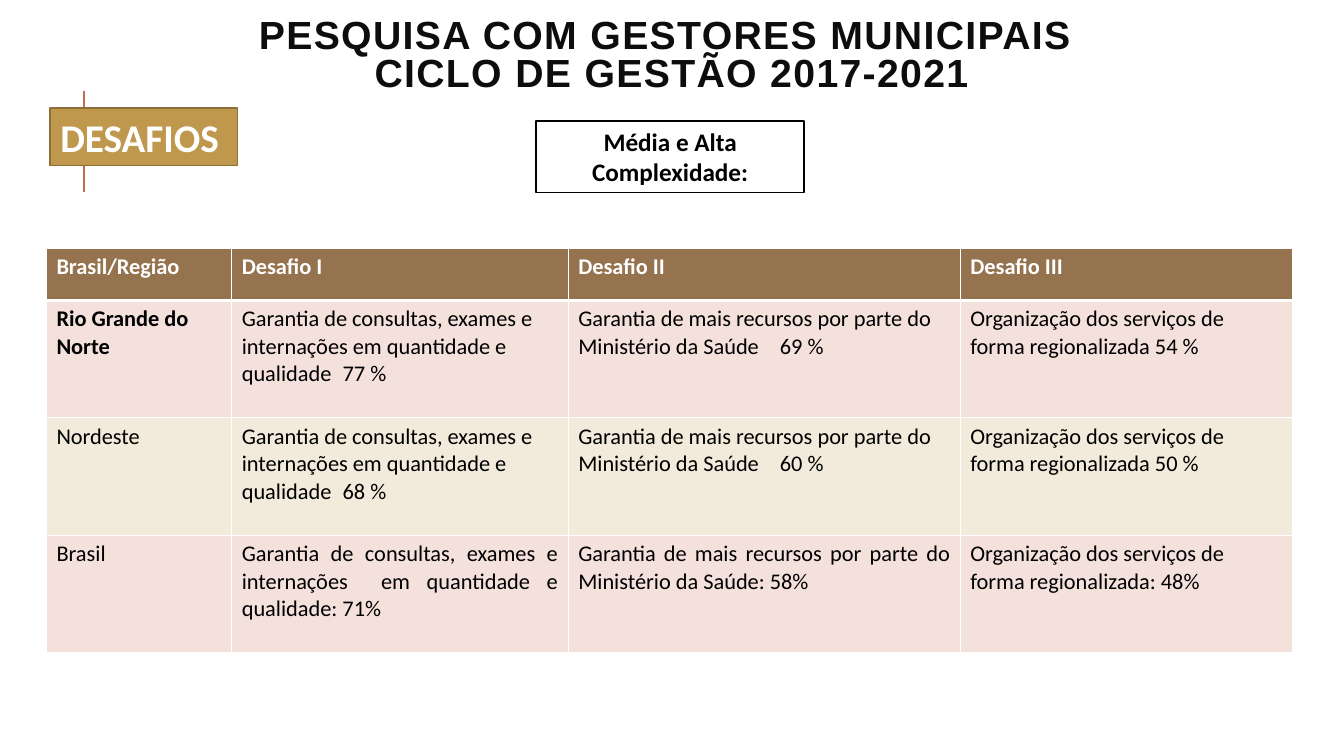
from lxml.etree import SubElement
from pptx import Presentation
from pptx.dml.color import RGBColor
from pptx.enum.shapes import MSO_CONNECTOR as CONN, MSO_SHAPE as SHAPE
from pptx.enum.text import MSO_ANCHOR as ANCHOR, PP_ALIGN as ALIGN
from pptx.oxml.ns import qn
from pptx.util import Cm, Pt

COLS = (4.67, 8.48, 9.88, 8.38)
HEADER_H, ROW_H = 1.32, 2.96
HEADER = ("Brasil/Região", "Desafio I", "Desafio II", "Desafio III")
CONSULTAS = "Garantia de consultas, exames e internações em quantidade e qualidade"
RECURSOS = "Garantia de mais recursos por parte do Ministério da Saúde"
SERVICOS = "Organização dos serviços de forma regionalizada"
ROWS = (
    HEADER,
    ("Rio Grande do Norte", f"{CONSULTAS}\t77 %", f"{RECURSOS}\t69 %", f"{SERVICOS} 54 %"),
    ("Nordeste", f"{CONSULTAS}\t68 %", f"{RECURSOS}\t60 %", f"{SERVICOS} 50 %"),
    ("Brasil", f"{CONSULTAS.replace(' em', '  em')}: 71%", f"{RECURSOS}: 58%", f"{SERVICOS}: 48%"),
)


def rgb(color):
    return RGBColor.from_string(color)


def write(tf, text, size=16, color="000000", bold=False, align=ALIGN.LEFT,
          font="Calibri", line_spacing=None, tracking=None):
    """Fill the first paragraph; a newline in the text becomes a line break."""
    tf.word_wrap = True
    p = tf.paragraphs[0]
    p.alignment = align
    if line_spacing:
        p.line_spacing = line_spacing
    for i, line in enumerate(text.split("\n")):
        if i:
            p.add_line_break()
        r = p.add_run()
        r.text = line
        r.font.name, r.font.size, r.font.bold = font, Pt(size), bold
        r.font.color.rgb = rgb(color)
        if tracking:
            r._r.get_or_add_rPr().set("spc", str(tracking * 100))


def add_title(s, x, y, w, h):
    tf = s.shapes.add_textbox(Cm(x), Cm(y), Cm(w), Cm(h)).text_frame
    tf.vertical_anchor = ANCHOR.MIDDLE
    write(tf, "PESQUISA COM GESTORES MUNICIPAIS \nCICLO DE GESTÃO 2017-2021", size=28,
          color="0D0D0D", bold=True, align=ALIGN.CENTER, font="Arial",
          line_spacing=0.8, tracking=1)


def add_accent_line(s, x, y, h):
    line = s.shapes.add_connector(CONN.STRAIGHT, Cm(x), Cm(y + h), Cm(x), Cm(y))
    line.line.color.rgb, line.line.width = rgb("C66951"), Pt(1.5)
    SubElement(line._element.spPr, qn("a:effectLst"))


def add_label(s, x, y, w, h, text, fill, outline, **fmt):
    sp = s.shapes.add_shape(SHAPE.RECTANGLE, Cm(x), Cm(y), Cm(w), Cm(h))
    sp.shadow.inherit = False
    sp.fill.solid()
    sp.fill.fore_color.rgb = rgb(fill)
    sp.line.color.rgb, sp.line.width = rgb(outline), Pt(1.25)
    sp.text_frame.vertical_anchor = ANCHOR.MIDDLE
    write(sp.text_frame, text, bold=True, **fmt)


def style_cell(cell, fill, bottom=1):
    """White borders, in points, and a solid fill."""
    tcPr = cell._tc.get_or_add_tcPr()
    for side, width in zip("LRTB", (1, 1, 1, bottom)):
        ln = SubElement(tcPr, qn(f"a:ln{side}"), w=str(Pt(width)))
        SubElement(SubElement(ln, qn("a:solidFill")), qn("a:srgbClr"), val="FFFFFF")
    cell.fill.solid()
    cell.fill.fore_color.rgb = rgb(fill)


def add_challenge_table(s, x, y):
    heights = [HEADER_H] + [ROW_H] * (len(ROWS) - 1)
    table = s.shapes.add_table(len(ROWS), len(COLS), Cm(x), Cm(y),
                               Cm(sum(COLS)), Cm(sum(heights))).table
    for col, width in zip(table.columns, COLS):
        col.width = Cm(width)
    for i, (texts, height) in enumerate(zip(ROWS, heights)):
        table.rows[i].height = Cm(height)
        header = i == 0
        fill = "94734E" if header else ("F2EADB", "F4E1DC")[i % 2]
        for j, text in enumerate(texts):
            cell = table.cell(i, j)
            style_cell(cell, fill, bottom=3 if header else 1)
            justified = texts[0] == "Brasil" and j in (1, 2)
            write(cell.text_frame, text, color="FFFFFF" if header else "000000",
                  bold=header or (i, j) == (1, 0),
                  align=ALIGN.JUSTIFY if justified else ALIGN.LEFT)


def main():
    prs = Presentation()
    prs.slide_width, prs.slide_height = Cm(33.87), Cm(19.05)
    s = prs.slides.add_slide(prs.slide_layouts[6])
    add_accent_line(s, 2.11, 2.29, 2.54)
    add_title(s, 2.39, 0.43, 29.08, 2.03)
    add_label(s, 13.51, 3.05, 6.76, 1.8, "Média e Alta Complexidade:",
              "FFFFFF", "000000", size=18, align=ALIGN.CENTER)
    add_label(s, 1.27, 2.72, 4.72, 1.45, "DESAFIOS",
              "BF974D", "8D7039", size=28, color="FFFFFF")
    add_challenge_table(s, 1.17, 6.25)
    prs.save("out.pptx")


if __name__ == "__main__":
    main()
